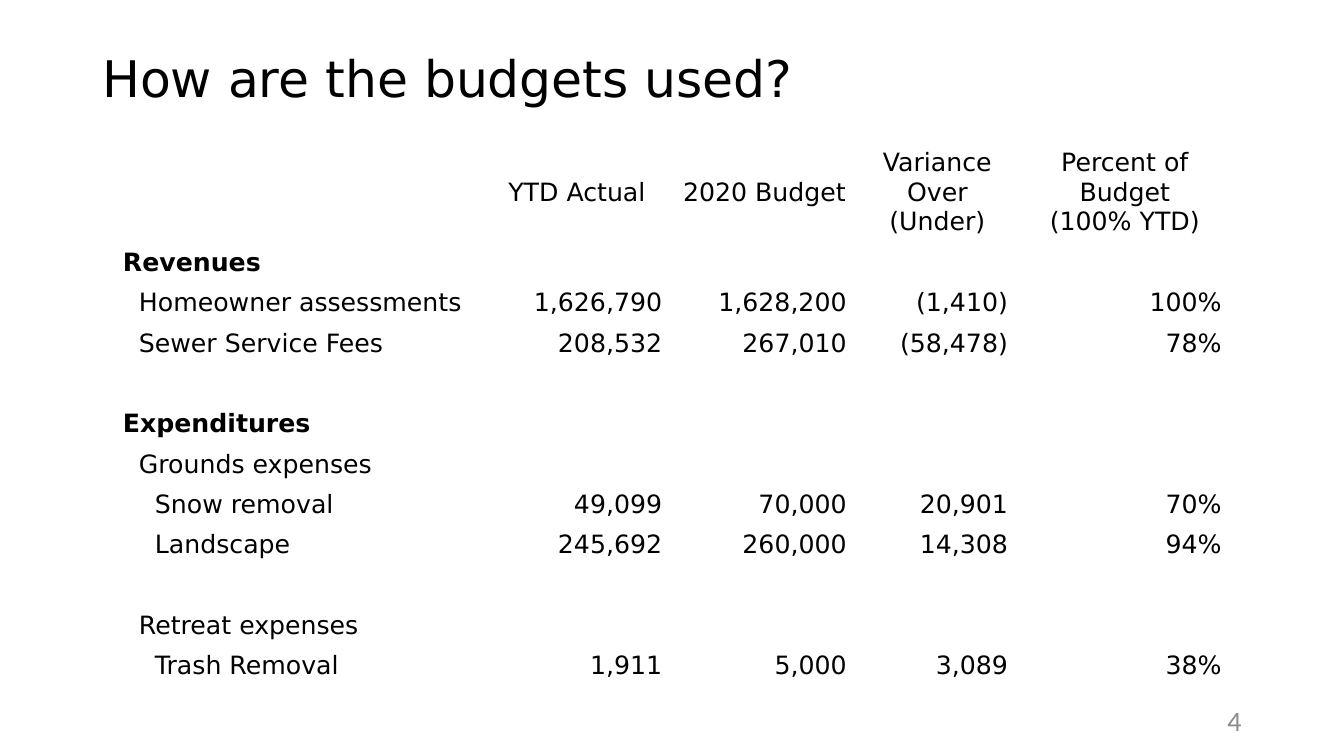
from lxml.etree import SubElement
from pptx import Presentation
from pptx.dml.color import RGBColor
from pptx.enum.text import MSO_ANCHOR, PP_ALIGN
from pptx.oxml.ns import qn
from pptx.util import Pt

# Content
TITLE = "How are the budgets used?"
PAGE = "4"
HEADINGS = ["", "YTD Actual", "2020 Budget", "Variance Over (Under)",
            "Percent of\nBudget\n(100% YTD)"]
BUDGET_LINES = [  # (outline level, label, figures)
    (0, "Revenues", []),
    (1, "Homeowner assessments", ["1,626,790", "1,628,200", "(1,410)", "100%"]),
    (1, "Sewer Service Fees", ["208,532", "267,010", "(58,478)", "78%"]),
    (0, "", []),
    (0, "Expenditures", []),
    (1, "Grounds expenses", []),
    (2, "Snow removal", ["49,099", "70,000", "20,901", "70%"]),
    (2, "Landscape", ["245,692", "260,000", "14,308", "94%"]),
    (0, "", []),
    (1, "Retreat expenses", []),
    (2, "Trash Removal", ["1,911", "5,000", "3,089", "38%"]),
]

THEME = {
    "paper": RGBColor(0xFF, 0xFF, 0xFF),
    "title": {"name": "DejaVu Sans", "size": Pt(36), "color": RGBColor(0, 0, 0)},
    "body": {"name": "DejaVu Sans", "size": Pt(18), "color": RGBColor(0, 0, 0)},
    "page": {"name": "Calibri", "size": Pt(20), "color": RGBColor(0x8C, 0x8C, 0x8C)},
}

# Layout, in points
SLIDE_SIZE = (960, 540)
TITLE_BOX = (66, 28.8, 828, 58.3)
PAGE_BOX = (678, 500.4, 216, 28.8)
TABLE_AT = (80.6, 101.5)
COLUMN_WIDTHS = [263.5, 136.1, 131.8, 115.2, 152.6]
HEADING_HEIGHT, LINE_HEIGHT = 70.2, 28.4
INDENT_STEP = 11.45


def write(frame, words, style, align=PP_ALIGN.LEFT, bold=False, spacing=None):
    frame.text = words
    for paragraph in frame.paragraphs:
        paragraph.alignment = align
        paragraph.line_spacing = spacing
        for run in paragraph.runs:
            for key, value in {"name": style["name"], "size": style["size"],
                               "bold": bold}.items():
                setattr(run.font, key, value)
            run.font.color.rgb = style["color"]


def add_words(slide, box, words, style, **options):
    frame = slide.shapes.add_textbox(*map(Pt, box)).text_frame
    frame.word_wrap = True
    frame.vertical_anchor = MSO_ANCHOR.MIDDLE
    write(frame, words, style, **options)


def fill_cell(cell, words, level=0, **options):
    body = THEME["body"]
    cell.fill.solid()
    cell.fill.fore_color.rgb = THEME["paper"]
    write(cell.text_frame, words, body, **options)
    paragraph = cell.text_frame.paragraphs[0]._p
    if level:
        paragraph.get_or_add_pPr().set("marL", str(Pt(level * INDENT_STEP)))
    if not words:  # an empty cell keeps the body type size
        end = SubElement(paragraph, qn("a:endParaRPr"), sz=str(int(body["size"].pt * 100)))
        SubElement(end, qn("a:latin"), typeface=body["name"])


def add_budget_table(slide):
    height = HEADING_HEIGHT + LINE_HEIGHT * len(BUDGET_LINES)
    size = (sum(COLUMN_WIDTHS), height)
    table = slide.shapes.add_table(len(BUDGET_LINES) + 1, len(COLUMN_WIDTHS),
                                   *map(Pt, TABLE_AT + size)).table
    for column, width in zip(table.columns, COLUMN_WIDTHS):
        column.width = Pt(width)
    for index, row in enumerate(table.rows):
        row.height = Pt(LINE_HEIGHT if index else HEADING_HEIGHT)

    # Headings
    for column, heading in enumerate(HEADINGS):
        cell = table.cell(0, column)
        cell.vertical_anchor = MSO_ANCHOR.MIDDLE
        fill_cell(cell, heading, align=PP_ALIGN.CENTER)

    # Budget lines
    for row, (level, label, figures) in enumerate(BUDGET_LINES, 1):
        fill_cell(table.cell(row, 0), label, level, bold=level == 0)
        for column in range(1, len(HEADINGS)):
            figure = figures[column - 1] if figures else ""
            fill_cell(table.cell(row, column), figure, align=PP_ALIGN.RIGHT)


def main():
    deck = Presentation()
    deck.slide_width, deck.slide_height = map(Pt, SLIDE_SIZE)
    slide = deck.slides.add_slide(deck.slide_layouts[6])
    add_words(slide, TITLE_BOX, TITLE, THEME["title"], spacing=0.9)
    add_words(slide, PAGE_BOX, PAGE, THEME["page"], align=PP_ALIGN.RIGHT)
    add_budget_table(slide)
    deck.save("out.pptx")


if __name__ == "__main__":
    main()
